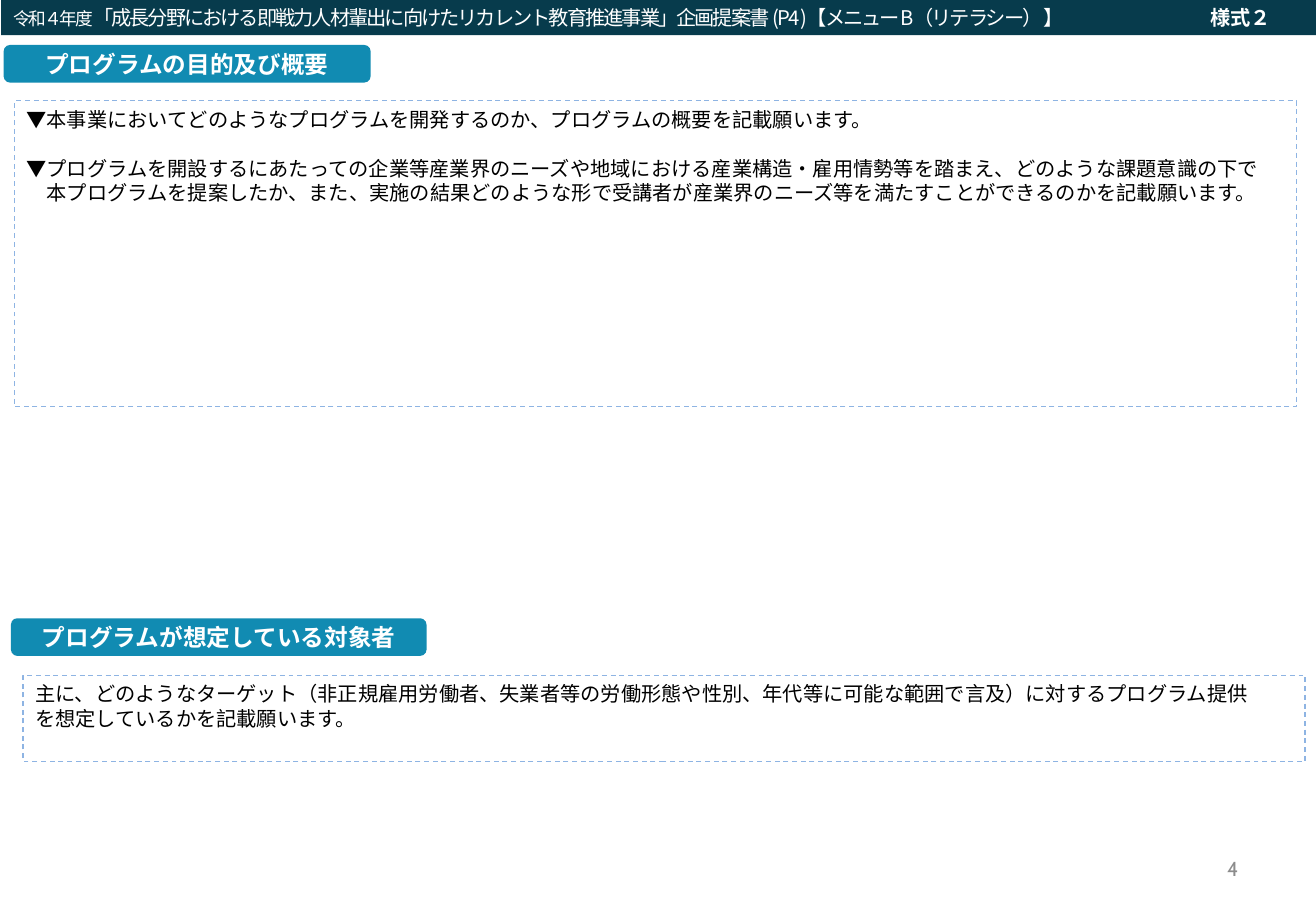
from lxml import etree
from pptx import Presentation
from pptx.dml.color import RGBColor
from pptx.enum.dml import MSO_LINE
from pptx.enum.shapes import MSO_SHAPE
from pptx.enum.text import MSO_ANCHOR, PP_ALIGN
from pptx.oxml.ns import qn
from pptx.util import Inches, Pt

RECT, ROUNDED = MSO_SHAPE.RECTANGLE, MSO_SHAPE.ROUNDED_RECTANGLE
LEFT, CENTER, RIGHT = PP_ALIGN.LEFT, PP_ALIGN.CENTER, PP_ALIGN.RIGHT
TOP, MIDDLE = MSO_ANCHOR.TOP, MSO_ANCHOR.MIDDLE
DASH = MSO_LINE.DASH

JAPANESE_FONT, LATIN_FONT = "Noto Sans CJK JP", "Cabin"
NAVY, TEAL, PALE_BLUE = "073B4C", "118BB2", "8EB4E3"
WHITE, BLACK, GRAY = "FFFFFF", "000000", "8C8C8C"
LINE_PITCH = 14.5


def color(value):
    return RGBColor.from_string(value)


def format_span(span, size, hue, font=JAPANESE_FONT, bold=False, spacing=0):
    span.font.size = Pt(size)
    span.font.bold = bold
    span.font.name = font
    span.font.color.rgb = color(hue)
    properties = span.font._element
    east_asian = etree.SubElement(properties, qn("a:ea"))
    east_asian.set("typeface", JAPANESE_FONT)
    if spacing:
        properties.set("spc", str(round(spacing * 100)))


def add_box(page, kind, left, top, width, height, fill=None, anchor=MIDDLE):
    box = page.shapes.add_shape(kind, Inches(left), Inches(top),
                                Inches(width), Inches(height))
    box.shadow.inherit = False
    if fill:
        box.fill.solid()
        box.fill.fore_color.rgb = color(fill)
        box.line.fill.background()
    else:
        box.fill.background()
    frame = box.text_frame
    frame.word_wrap = True
    frame.vertical_anchor = anchor
    if anchor == MIDDLE:
        frame.margin_top = frame.margin_bottom = 0
    return box


def add_heading(page, text, left, top, width):
    box = add_box(page, ROUNDED, left, top, width, 0.31, TEAL)
    box.text_frame.text = text
    para = box.text_frame.paragraphs[0]
    para.alignment = CENTER
    format_span(para.runs[0], 14, WHITE, bold=True)


def add_answer_area(page, lines, left, top, height, gap_before=None):
    """Dashed frame; gap_before is the index of a line set one line lower."""
    box = add_box(page, RECT, left, top, 10.55, height, anchor=TOP)
    box.line.color.rgb = color(PALE_BLUE)
    box.line.width = Pt(0.75)
    box.line.dash_style = DASH
    box.text_frame.text = "\n".join(lines)
    for index, para in enumerate(box.text_frame.paragraphs):
        para.alignment = LEFT
        para.line_spacing = Pt(LINE_PITCH)
        if index == gap_before:
            para.space_before = Pt(LINE_PITCH)
        format_span(para.runs[0], 12, BLACK)


def add_title_bar(page):
    bar = add_box(page, RECT, 0.01, 0, 10.83, 0.29, NAVY)
    para = bar.text_frame.paragraphs[0]
    para.alignment = LEFT
    # Tab stop that places the form number at the right
    tabs = etree.SubElement(para._p.get_or_add_pPr(), qn("a:tabLst"))
    etree.SubElement(tabs, qn("a:tab"), pos=str(Inches(9.85)), algn="l")
    spans = [
        ("令和４年度", 10.5, False, -1.2),
        ("「成長分野における即戦力人材輩出に向けたリカレント教育推進事業」"
         "企画提案書 (P4 )【メニューB（リテラシー） 】", 12, False, -1.2),
        ("\t様式２", 12, True, 0),
    ]
    for text, size, bold, spacing in spans:
        span = para.add_run()
        span.text = text
        format_span(span, size, WHITE, bold=bold, spacing=spacing)


def add_page_number(page, number):
    box = page.shapes.add_textbox(Inches(7.76), Inches(6.95),
                                  Inches(2.53), Inches(0.4))
    frame = box.text_frame
    frame.word_wrap = True
    frame.vertical_anchor = MIDDLE
    frame.text = number
    para = frame.paragraphs[0]
    para.alignment = RIGHT
    format_span(para.runs[0], 12, GRAY, font=LATIN_FONT)


def main():
    deck = Presentation()
    deck.slide_width, deck.slide_height = Inches(10.83), Inches(7.5)
    page = deck.slides.add_slide(deck.slide_layouts[6])

    # Purpose and outline
    add_heading(page, "プログラムの目的及び概要", 0.03, 0.37, 3.02)
    add_answer_area(page, [
        "▼本事業においてどのようなプログラムを開発するのか、プログラムの概要を記載願います。",
        "▼プログラムを開設するにあたっての企業等産業界のニーズや地域における産業構造・"
        "雇用情勢等を踏まえ、どのような課題意識の下で",
        "　本プログラムを提案したか、また、実施の結果どのような形で受講者が"
        "産業界のニーズ等を満たすことができるのかを記載願います。",
    ], 0.12, 0.83, 2.52, gap_before=1)

    # Intended participants
    add_heading(page, "プログラムが想定している対象者", 0.09, 5.09, 3.42)
    add_answer_area(page, [
        "主に、どのようなターゲット（非正規雇用労働者、失業者等の労働形態や性別、"
        "年代等に可能な範囲で言及）に対するプログラム提供",
        "を想定しているかを記載願います。",
    ], 0.19, 5.56, 0.71)

    # Title bar and page number
    add_title_bar(page)
    add_page_number(page, "4")
    deck.save("out.pptx")


if __name__ == "__main__":
    main()
